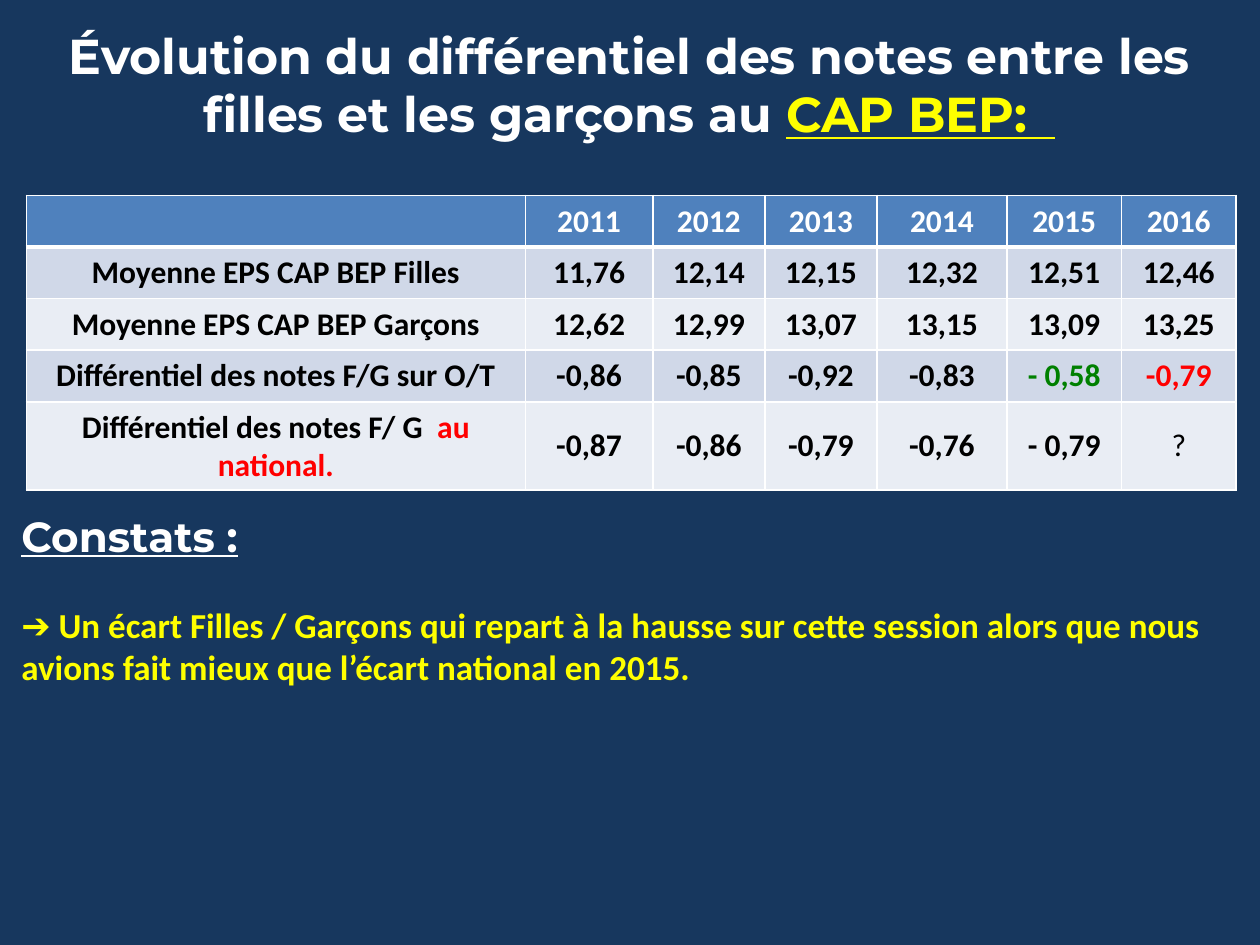
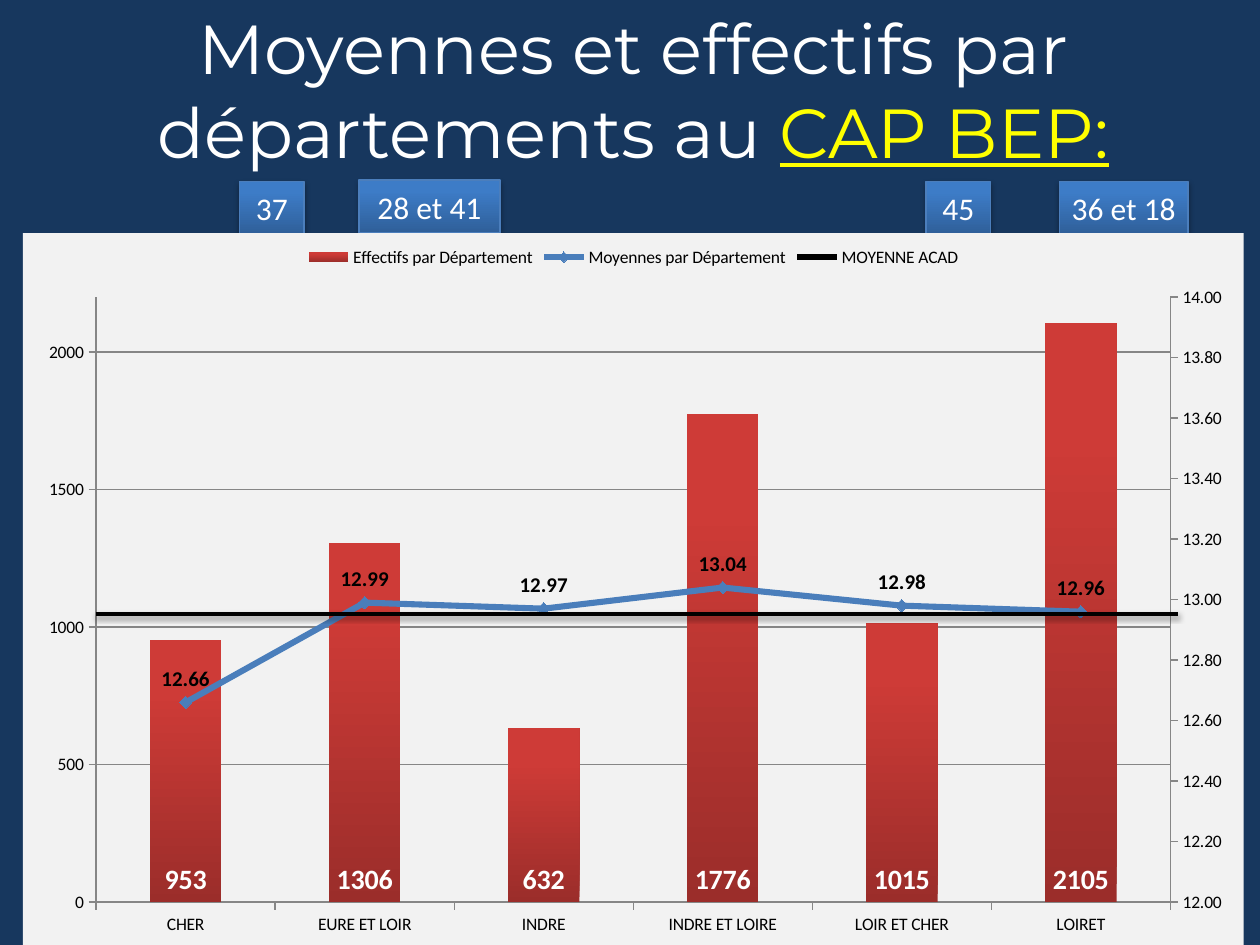
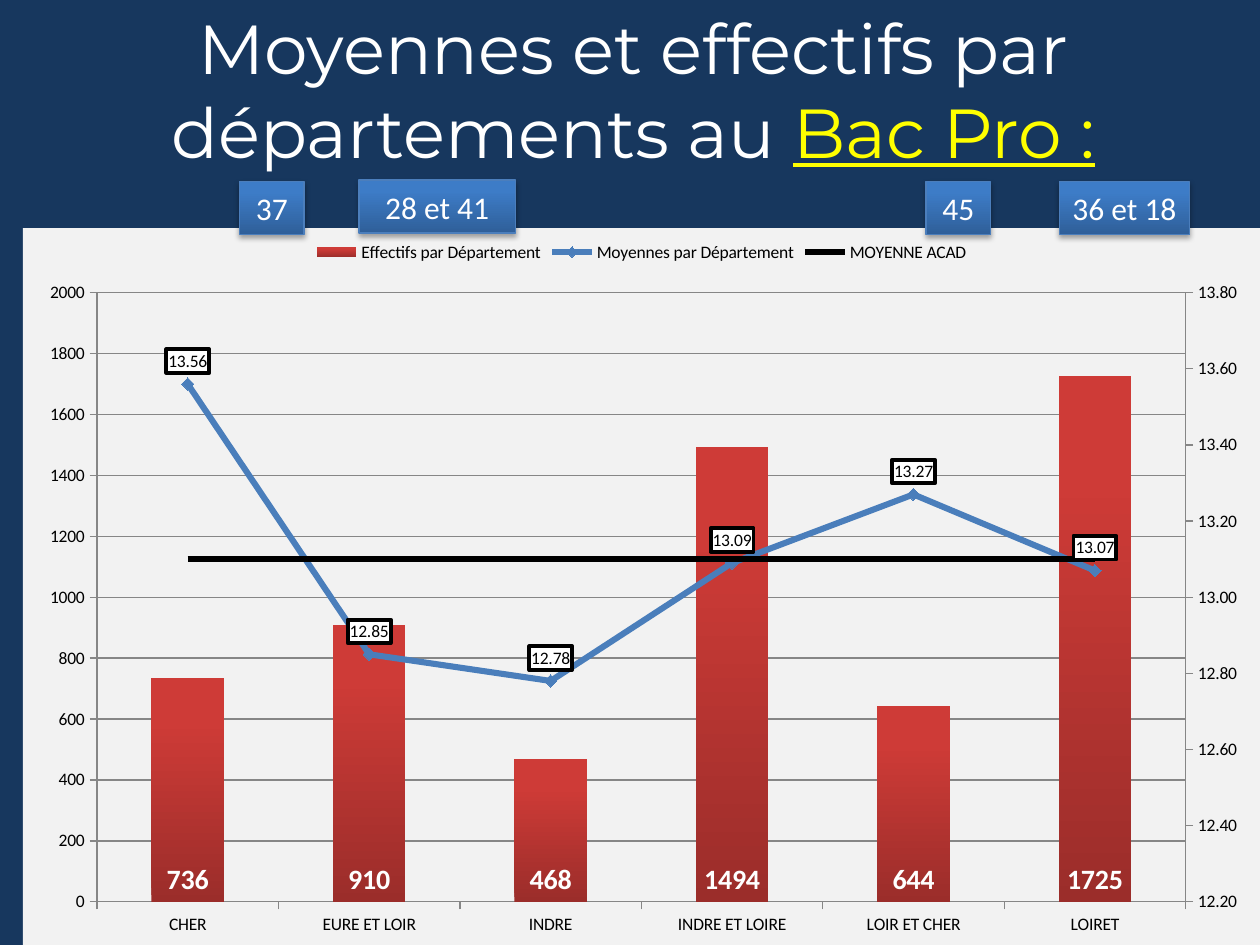
from dataclasses import dataclass

from pptx import Presentation
from pptx.chart.data import CategoryChartData
from pptx.dml.color import RGBColor
from pptx.enum.chart import XL_CHART_TYPE, XL_LABEL_POSITION, XL_LEGEND_POSITION, XL_MARKER_STYLE, XL_TICK_MARK
from pptx.enum.shapes import MSO_CONNECTOR, MSO_SHAPE
from pptx.enum.text import MSO_ANCHOR, MSO_AUTO_SIZE, PP_ALIGN
from pptx.oxml import parse_xml
from pptx.oxml.ns import nsdecls, qn
from pptx.util import Cm, Pt

COLUMNS = XL_CHART_TYPE.COLUMN_CLUSTERED
INSIDE_BASE, ABOVE = XL_LABEL_POSITION.INSIDE_BASE, XL_LABEL_POSITION.ABOVE
LEGEND_TOP = XL_LEGEND_POSITION.TOP
DIAMOND, NO_MARKER = XL_MARKER_STYLE.DIAMOND, XL_MARKER_STYLE.NONE
TICK_OUT = XL_TICK_MARK.OUTSIDE
BUTTON, STRAIGHT = MSO_SHAPE.ACTION_BUTTON_CUSTOM, MSO_CONNECTOR.STRAIGHT
TOP, MIDDLE = MSO_ANCHOR.TOP, MSO_ANCHOR.MIDDLE
CENTER, LEFT = PP_ALIGN.CENTER, PP_ALIGN.LEFT
NO_AUTOFIT = MSO_AUTO_SIZE.NONE

# Shared look
NAVY, WHITE, YELLOW, BLACK = "17375E", "FFFFFF", "FFFF00", "000000"
RED, GREEN = "FF0000", "008000"
HEADER_BLUE, BAND_DARK, BAND_LIGHT = "4F81BD", "D0D8E8", "E9EDF4"
BUTTON_DARK, BUTTON_LIGHT, BUTTON_EDGE = "2F5F99", "3D7CC7", "4B7EBC"
BAR_DARK, BAR_LIGHT, MEAN_BLUE = "9B2D2A", "CE3B37", "4A7EBB"
CHART_GREY, AXIS_GREY = "F2F2F2", "868686"
HEADING_FONT, BODY_FONT = "Montserrat", "Calibri"
TITLE_ONLY = 5
DEPARTMENTS = ["CHER", "EURE ET LOIR", "INDRE", "INDRE ET LOIRE", "LOIR ET CHER", "LOIRET"]


@dataclass
class Span:
    text: str
    color: str = WHITE
    size: float = 18
    font: str = BODY_FONT
    bold: bool = False
    underline: bool = False


@dataclass
class Area:
    left: float
    top: float
    width: float
    height: float

    def lengths(self) -> list:
        return [Cm(value) for value in (self.left, self.top, self.width, self.height)]


@dataclass
class Button:
    text: str
    area: Area


@dataclass
class Scale:
    low: float
    high: float
    step: float


@dataclass
class DepartmentChart:
    area: Area
    counts: list
    means: list
    academy: list
    count_scale: Scale
    mean_scale: Scale
    framed_labels: bool


def rgb(color: str) -> RGBColor:
    return RGBColor.from_string(color)


# Text
def write_spans(para, spans: list, align=CENTER) -> None:
    para.alignment = align
    for span in spans:
        run = para.add_run()
        run.text = span.text
        run.font.name = span.font
        run.font.size = Pt(span.size)
        run.font.bold = span.bold
        run.font.underline = span.underline
        run.font.color.rgb = rgb(span.color)


def add_title(page, area: Area, text: str, exam: str, size: float, bold: bool, anchor) -> None:
    title = page.shapes.title
    title.left, title.top, title.width, title.height = area.lengths()
    frame = title.text_frame
    frame.auto_size = NO_AUTOFIT
    frame.word_wrap = True
    frame.vertical_anchor = anchor
    write_spans(frame.paragraphs[0], [
        Span(text, WHITE, size, HEADING_FONT, bold),
        Span(exam, YELLOW, size, HEADING_FONT, bold, True),
    ])


# Shapes
def cast_shadow(shape_properties, blur: float, distance: float, opacity: int) -> None:
    old = shape_properties.find(qn("a:effectLst"))
    if old is not None:
        shape_properties.remove(old)
    shape_properties.append(parse_xml(
        f'<a:effectLst {nsdecls("a")}><a:outerShdw blurRad="{Pt(blur)}" dist="{Pt(distance)}" '
        f'dir="5400000" rotWithShape="0"><a:srgbClr val="{BLACK}"><a:alpha val="{opacity * 1000}"/>'
        '</a:srgbClr></a:outerShdw></a:effectLst>'))


def fill_upward(fill, dark: str, light: str) -> None:
    fill.gradient()
    fill.gradient_angle = 90
    for stop, color, position in zip(fill.gradient_stops, (dark, light), (0, 0.8)):
        stop.color.rgb = rgb(color)
        stop.position = position


def add_button(page, button: Button) -> None:
    shape = page.shapes.add_shape(BUTTON, *button.area.lengths())
    shape.shadow.inherit = False
    fill_upward(shape.fill, BUTTON_DARK, BUTTON_LIGHT)
    shape.line.color.rgb = rgb(BUTTON_EDGE)
    shape.line.width = Pt(0.75)
    cast_shadow(shape.element.spPr, 3.1, 1.8, 35)
    frame = shape.text_frame
    frame.word_wrap = False
    frame.vertical_anchor = MIDDLE
    write_spans(frame.paragraphs[0], [Span(button.text)])


def add_academy_line(page, left: float, right: float, height: float) -> None:
    line = page.shapes.add_connector(STRAIGHT, Cm(left), Cm(height), Cm(right), Cm(height))
    line.line.color.rgb = rgb(BLACK)
    line.line.width = Pt(2.25)
    cast_shadow(line.element.spPr, 3.1, 1.6, 38)


# Table
def set_borders(cell, bottom: float) -> None:
    properties = cell._tc.get_or_add_tcPr()
    for index, (side, width) in enumerate((("L", 1), ("R", 1), ("T", 1), ("B", bottom))):
        properties.insert(index, parse_xml(
            f'<a:ln{side} {nsdecls("a")} w="{Pt(width)}"><a:solidFill>'
            f'<a:srgbClr val="{WHITE}"/></a:solidFill></a:ln{side}>'))


def add_marks_table(page, area: Area, widths: list, rows: list) -> None:
    table = page.shapes.add_table(len(rows), len(widths), *area.lengths()).table
    for column, width in zip(table.columns, widths):
        column.width = Cm(width)
    for row_index, row in enumerate(rows):
        header = row_index == 0
        table.rows[row_index].height = Cm(1.04)
        band = HEADER_BLUE if header else (BAND_LIGHT, BAND_DARK)[row_index % 2]
        for column_index, content in enumerate(row):
            cell = table.cell(row_index, column_index)
            cell.fill.solid()
            cell.fill.fore_color.rgb = rgb(band)
            cell.vertical_anchor = MIDDLE
            set_borders(cell, 3 if header else 1)
            if isinstance(content, str):
                content = [Span(content, WHITE if header else BLACK, bold=True)] if content else []
            write_spans(cell.text_frame.paragraphs[0], content)


# Combined chart
def move_to_right_axis(chart, scale: Scale) -> None:
    plot_area = chart.element.find(".//" + qn("c:plotArea"))
    bars = plot_area.find(qn("c:barChart"))
    lines = parse_xml(
        f'<c:lineChart {nsdecls("c")}><c:grouping val="standard"/><c:varyColors val="0"/>'
        '<c:marker val="1"/><c:axId val="50010"/><c:axId val="50020"/></c:lineChart>')
    for index, series in enumerate(bars.findall(qn("c:ser"))[1:]):
        for bar_only in series.findall(qn("c:invertIfNegative")):
            series.remove(bar_only)
        lines.insert(2 + index, series)
    bars.addnext(lines)
    hidden_axis = parse_xml(
        f'<c:catAx {nsdecls("c")}><c:axId val="50010"/><c:scaling><c:orientation val="minMax"/></c:scaling>'
        '<c:delete val="1"/><c:axPos val="b"/><c:crossAx val="50020"/><c:crosses val="autoZero"/></c:catAx>')
    right_axis = parse_xml(
        f'<c:valAx {nsdecls("c", "a")}><c:axId val="50020"/><c:scaling><c:orientation val="minMax"/>'
        f'<c:max val="{scale.high}"/><c:min val="{scale.low}"/></c:scaling><c:delete val="0"/>'
        '<c:axPos val="r"/><c:numFmt formatCode="0.00" sourceLinked="0"/><c:majorTickMark val="out"/>'
        '<c:minorTickMark val="none"/><c:tickLblPos val="nextTo"/><c:spPr><a:ln w="9525"><a:solidFill>'
        f'<a:srgbClr val="{AXIS_GREY}"/></a:solidFill></a:ln></c:spPr><c:crossAx val="50010"/>'
        f'<c:crosses val="max"/><c:crossBetween val="between"/><c:majorUnit val="{scale.step}"/></c:valAx>')
    last_axis = plot_area.findall(qn("c:valAx"))[-1]
    last_axis.addnext(hidden_axis)
    hidden_axis.addnext(right_axis)


def place_plot(chart, left: float, top: float, width: float, height: float) -> None:
    plot_area = chart.element.find(".//" + qn("c:plotArea"))
    for old in plot_area.findall(qn("c:layout")):
        plot_area.remove(old)
    sizes = "".join(f'<c:{name} val="{value}"/>' for name, value in
                    (("x", left), ("y", top), ("w", width), ("h", height)))
    plot_area.insert(0, parse_xml(
        f'<c:layout {nsdecls("c")}><c:manualLayout><c:layoutTarget val="inner"/>'
        f'<c:xMode val="edge"/><c:yMode val="edge"/>{sizes}</c:manualLayout></c:layout>'))


def box_properties(fill: str, line: str):
    return parse_xml(
        f'<c:spPr {nsdecls("c", "a")}><a:solidFill><a:srgbClr val="{fill}"/></a:solidFill>{line}</c:spPr>')


def label_series(series, position, size: float, color: str, bold: bool, number_format: str) -> None:
    labels = series.data_labels
    labels.show_value = True
    labels.position = position
    labels.number_format = number_format
    labels.number_format_is_linked = False
    labels.font.name = BODY_FONT
    labels.font.size = Pt(size)
    labels.font.bold = bold
    labels.font.color.rgb = rgb(color)


def frame_mean_labels(chart) -> None:
    line = f'<a:ln w="{Pt(2.25)}"><a:solidFill><a:srgbClr val="{BLACK}"/></a:solidFill></a:ln>'
    labels = chart.element.find(".//" + qn("c:lineChart")).find(".//" + qn("c:dLbls"))
    labels.find(qn("c:numFmt")).addnext(box_properties(WHITE, line))


def style_line(series, color: str, marker) -> None:
    series.smooth = False
    series.format.line.color.rgb = rgb(color)
    series.format.line.width = Pt(3.5)
    series.marker.style = marker
    if marker != NO_MARKER:
        series.marker.size = 7
        series.marker.format.fill.solid()
        series.marker.format.fill.fore_color.rgb = rgb(color)
        series.marker.format.line.color.rgb = rgb(color)


def add_department_chart(page, info: DepartmentChart) -> None:
    data = CategoryChartData()
    data.categories = DEPARTMENTS
    data.add_series("Effectifs par Département", info.counts)
    data.add_series("Moyennes par Département", info.means)
    data.add_series("MOYENNE ACAD", info.academy)
    chart = page.shapes.add_chart(COLUMNS, *info.area.lengths(), data).chart
    chart.font.name = BODY_FONT
    chart.font.size = Pt(10)
    chart.font.color.rgb = rgb(BLACK)
    chart.has_title = False
    chart.has_legend = True
    chart.legend.position = LEGEND_TOP
    chart.legend.include_in_layout = False
    chart.element.find(qn("c:chart")).addnext(box_properties(CHART_GREY, "<a:ln><a:noFill/></a:ln>"))

    # Axes
    value_axis = chart.value_axis
    value_axis.minimum_scale = info.count_scale.low
    value_axis.maximum_scale = info.count_scale.high
    value_axis.major_unit = info.count_scale.step
    value_axis.has_major_gridlines = True
    for axis in (chart.category_axis, value_axis):
        axis.major_tick_mark = TICK_OUT
    for part in (chart.category_axis, value_axis, value_axis.major_gridlines):
        part.format.line.color.rgb = rgb(AXIS_GREY)
        part.format.line.width = Pt(0.75)
    move_to_right_axis(chart, info.mean_scale)
    place_plot(chart, 0.06, 0.09, 0.88, 0.85)

    # Series
    bars, lines = chart.plots
    bars.gap_width = 150
    bars.vary_by_categories = False
    counts = bars.series[0]
    means, academy = lines.series
    fill_upward(counts.format.fill, BAR_DARK, BAR_LIGHT)
    label_series(counts, INSIDE_BASE, 16, WHITE, True, "General")
    style_line(means, MEAN_BLUE, DIAMOND)
    style_line(academy, BLACK, NO_MARKER)
    framed = info.framed_labels
    label_series(means, ABOVE, 10 if framed else 12, BLACK, not framed, "0.00")
    if framed:
        frame_mean_labels(chart)


# Slides
def build_gap_slide(deck) -> None:
    page = deck.slides.add_slide(deck.slide_layouts[TITLE_ONLY])
    add_title(page, Area(0.71, 0.38, 23.95, 2.64),
              "Évolution du différentiel des notes entre les filles et les garçons au ",
              "CAP BEP:  ", 28, True, TOP)
    box = page.shapes.add_textbox(*Area(0.18, 10.16, 25.12, 4.7).lengths())
    frame = box.text_frame
    frame.word_wrap = True
    write_spans(frame.paragraphs[0], [Span("Constats :", WHITE, 24, HEADING_FONT, True, True)], LEFT)
    finding = frame.add_paragraph()
    finding.space_before = Pt(24.4)
    write_spans(finding, [Span(
        "➔ Un écart Filles / Garçons qui repart à la hausse sur cette session alors que nous "
        "avions fait mieux que l’écart national en 2015.", YELLOW, 20, bold=True)], LEFT)
    add_marks_table(page, Area(0.53, 3.94, 24.39, 5.2), [10.06, 2.57, 2.26, 2.26, 2.62, 2.31, 2.31], [
        ["", "2011", "2012", "2013", "2014", "2015", "2016"],
        ["Moyenne EPS CAP BEP Filles", "11,76", "12,14", "12,15", "12,32", "12,51", "12,46"],
        ["Moyenne EPS CAP BEP Garçons", "12,62", "12,99", "13,07", "13,15", "13,09", "13,25"],
        ["Différentiel des notes F/G sur O/T", "-0,86", "-0,85", "-0,92", "-0,83",
         [Span("- 0,58", GREEN, bold=True)], [Span("-0,79", RED, bold=True)]],
        [[Span("Différentiel des notes F/ G  ", BLACK, bold=True), Span("au national.", RED, bold=True)],
         "-0,87", "-0,86", "-0,79", "-0,76", "- 0,79", [Span("?", BLACK)]],
    ])


def add_department_page(deck, exam: str):
    page = deck.slides.add_slide(deck.slide_layouts[TITLE_ONLY])
    add_title(page, Area(0.46, 0.2, 24.61, 3.18), "Moyennes et effectifs par départements au ",
              exam, 39.6, False, MIDDLE)
    return page


def add_department_buttons(page, pair_width: float, last_width: float) -> None:
    for button in (
        Button("45", Area(18.67, 3.66, 1.3, 1.07)),
        Button("36 et 18", Area(21.36, 3.66, last_width, 1.07)),
        Button("37", Area(4.83, 3.66, 1.3, 1.07)),
        Button("28 et 41", Area(7.24, 3.63, pair_width, 1.07)),
    ):
        add_button(page, button)


def build_cap_slide(deck) -> None:
    page = add_department_page(deck, "CAP BEP:")
    add_department_buttons(page, 2.84, 2.59)
    add_department_chart(page, DepartmentChart(
        Area(0.46, 4.7, 24.61, 14.35),
        [953, 1306, 632, 1776, 1015, 2105], [12.66, 12.99, 12.97, 13.04, 12.98, 12.96],
        [None, 0, 0, 0, 0, 0], Scale(0, 2200, 500), Scale(12, 14, 0.2), False))
    add_academy_line(page, 1.93, 23.75, 12.37)


def build_bac_slide(deck) -> None:
    page = add_department_page(deck, "Bac Pro :")
    add_department_chart(page, DepartmentChart(
        Area(0.46, 4.6, 24.94, 14.45),
        [736, 910, 468, 1494, 644, 1725], [13.56, 12.85, 12.78, 13.09, 13.27, 13.07],
        [13.1] * 6, Scale(0, 2000, 200), Scale(12.2, 13.8, 0.2), True))
    add_department_buttons(page, 3.15, 2.62)


def main() -> None:
    deck = Presentation()
    deck.slide_width, deck.slide_height = Cm(25.4), Cm(19.05)
    background = deck.slide_master.background.fill
    background.solid()
    background.fore_color.rgb = rgb(NAVY)
    build_gap_slide(deck)
    build_cap_slide(deck)
    build_bac_slide(deck)
    deck.save("out.pptx")


if __name__ == "__main__":
    main()
